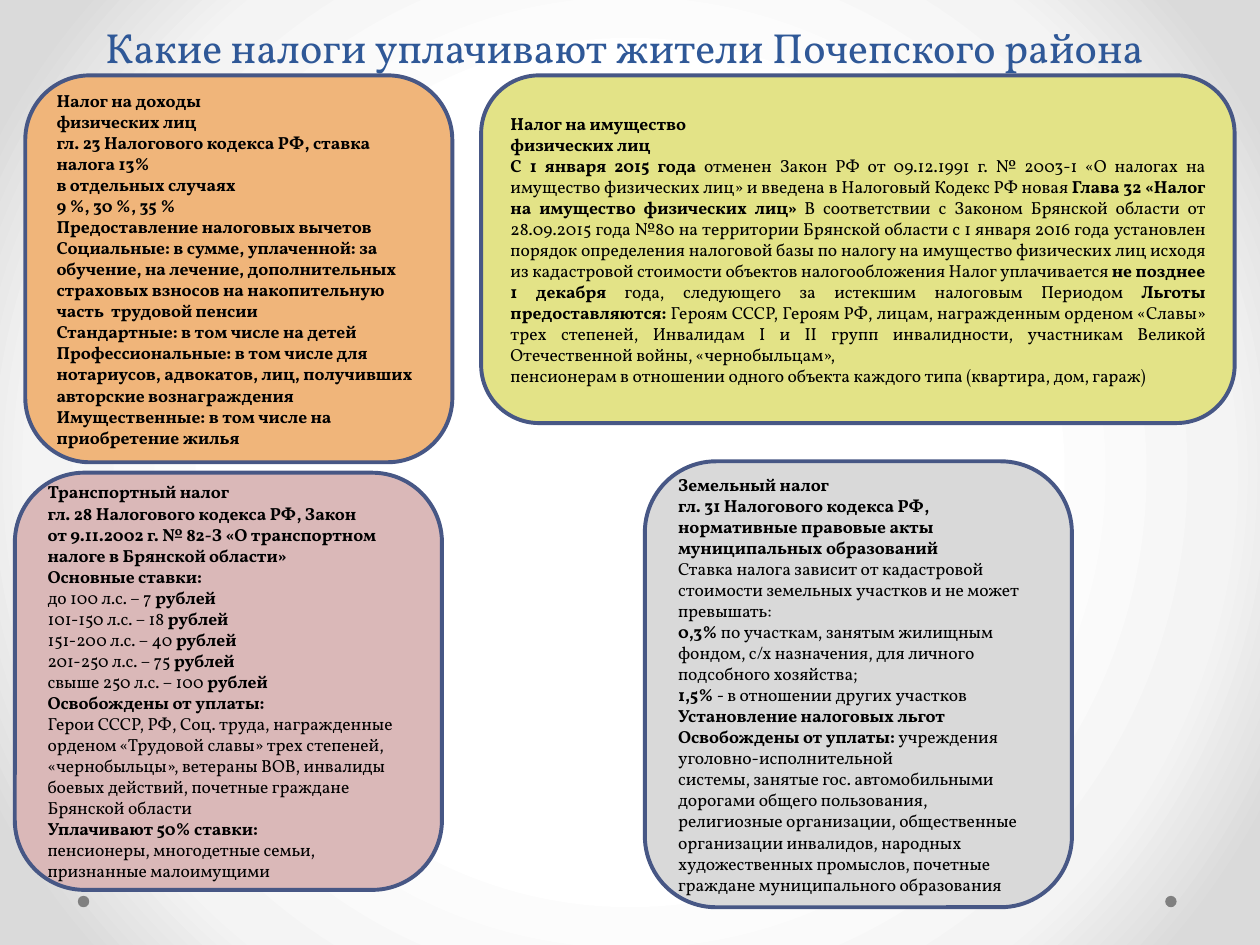
from lxml import etree
from pptx import Presentation
from pptx.dml.color import RGBColor
from pptx.enum.shapes import MSO_SHAPE
from pptx.enum.text import MSO_ANCHOR, MSO_AUTO_SIZE, PP_ALIGN
from pptx.oxml.ns import qn
from pptx.util import Cm, Pt

ROUNDED, OVAL = MSO_SHAPE.ROUNDED_RECTANGLE, MSO_SHAPE.OVAL
MIDDLE, BOTTOM = MSO_ANCHOR.MIDDLE, MSO_ANCHOR.BOTTOM
LEFT, CENTER, JUSTIFY = PP_ALIGN.LEFT, PP_ALIGN.CENTER, PP_ALIGN.JUSTIFY
NO_AUTOFIT = MSO_AUTO_SIZE.NONE

FONT = "Vollkorn"
BLACK = RGBColor(0x00, 0x00, 0x00)
TITLE_BLUE = RGBColor(0x2F, 0x58, 0x97)
OUTLINE_BLUE = RGBColor(0x47, 0x57, 0x85)
ORANGE = RGBColor(0xF0, 0xB5, 0x7A)
LIME = RGBColor(0xE3, 0xE3, 0x87)
PINK = RGBColor(0xDA, 0xB8, 0xB8)
LIGHT_GRAY = RGBColor(0xD9, 0xD9, 0xD9)
DOT_GRAY = RGBColor(0x80, 0x80, 0x80)
BACKDROP_STOPS = [
    (50, RGBColor(0xFF, 0xFF, 0xFF)),
    (76, RGBColor(0xF4, 0xF4, 0xF4)),
    (92, RGBColor(0xDA, 0xDA, 0xDA)),
]

TITLE = "Какие налоги уплачивают жители Почепского района"

# One line per paragraph; asterisks switch bold on and off
INCOME_TAX = [f"*{line}*" for line in (
    "Налог на доходы",
    "физических лиц",
    "гл. 23 Налогового кодекса РФ, ставка",
    "налога 13%",
    "в отдельных случаях",
    "9 %, 30 %, 35 %",
    "Предоставление налоговых вычетов",
    "Социальные: в сумме, уплаченной: за",
    "обучение, на лечение, дополнительных",
    "страховых взносов на накопительную часть  трудовой пенсии",
    "Стандартные: в том числе на детей",
    "Профессиональные: в том числе для",
    "нотариусов, адвокатов, лиц, получивших",
    "авторские вознаграждения",
    "Имущественные: в том числе на",
    "приобретение жилья",
)]
PROPERTY_TAX = [
    "*Налог на имущество*",
    "*физических лиц*",
    "*С 1 января 2015 года *отменен Закон РФ от 09.12.1991 г. № 2003-1 «О налогах на "
    "имущество физических лиц» и введена в Налоговый Кодекс РФ новая "
    "*Глава 32 «Налог на имущество физических лиц» *В соответствии с Законом Брянской "
    "области от 28.09.2015 года №80 на территории Брянской области с 1 января 2016 года "
    "установлен порядок определения налоговой базы по налогу на имущество физических лиц "
    "исходя из кадастровой стоимости объектов налогообложения Налог уплачивается "
    "*не позднее 1 декабря *года, следующего за истекшим налоговым Периодом "
    "*Льготы предоставляются: *Героям СССР, Героям РФ, лицам, награжденным орденом «Славы» "
    "трех степеней, Инвалидам I и II групп инвалидности, участникам Великой Отечественной "
    "войны, «чернобыльцам»,",
    "пенсионерам в отношении одного объекта каждого типа (квартира, дом, гараж)",
]
TRANSPORT_TAX = [
    "*Транспортный налог*",
    "*гл. 28 Налогового кодекса РФ, Закон*",
    "*от 9.11.2002 г. № 82-З «О транспортном*",
    "*налоге в Брянской области»*",
    "*Основные ставки:*",
    "до 100 л.с. – 7 *рублей*",
    "101-150 л.с. – 18 *рублей*",
    "151-200 л.с. – 40 *рублей*",
    "201-250 л.с. – 75 *рублей*",
    "свыше 250 л.с. – 100 *рублей*",
    "*Освобождены от уплаты:*",
    "Герои СССР, РФ, Соц. труда, награжденные",
    "орденом «Трудовой славы» трех степеней,",
    "«чернобыльцы», ветераны ВОВ, инвалиды",
    "боевых действий, почетные граждане Брянской области",
    "*Уплачивают 50% ставки:*",
    "пенсионеры, многодетные семьи, признанные малоимущими",
]
LAND_TAX = [
    "*Земельный налог*",
    "*гл. 31 Налогового кодекса РФ,*",
    "*нормативные правовые акты*",
    "*муниципальных образований*",
    "Ставка налога зависит от кадастровой",
    "стоимости земельных участков и не может",
    "превышать:",
    "*0,3% *по участкам, занятым жилищным",
    "фондом, с/х назначения, для личного",
    "подсобного хозяйства;",
    "*1,5% *- в отношении других участков",
    "*Установление налоговых льгот*",
    "*Освобождены от уплаты: *учреждения уголовно-исполнительной",
    "системы, занятые гос. автомобильными",
    "дорогами общего пользования,",
    "религиозные организации, общественные",
    "организации инвалидов, народных",
    "художественных промыслов, почетные",
    "граждане муниципального образования",
]

# Left, top, width, height in centimetres
TITLE_BOX = (1.09, 0.53, 22.99, 1.04)
FOOTER_BOX = (1.57, 18.06, 22.15, 0.23)
CARDS = [
    ((0.51, 1.52, 8.61, 7.8), ORANGE, LEFT, INCOME_TAX),
    ((9.7, 1.52, 15.19, 7.01), LIME, JUSTIFY, PROPERTY_TAX),
    ((0.3, 9.53, 8.61, 8.41), PINK, LEFT, TRANSPORT_TAX),
    ((13, 9.3, 8.61, 8.99), LIGHT_GRAY, LEFT, LAND_TAX),
]


def add_span(para, text, size, color, bold=False):
    span = para.add_run()
    span.text = text
    font = span.font
    font.name, font.size, font.bold = FONT, Pt(size), bold
    font.color.rgb = color


def paint_backdrop(page):
    """Radial gradient from the centre of the page."""
    page.background.fill.gradient()
    gradient = page.element.find(".//" + qn("a:gradFill"))
    for child in list(gradient):
        gradient.remove(child)
    stops = etree.SubElement(gradient, qn("a:gsLst"))
    for percent, color in BACKDROP_STOPS:
        stop = etree.SubElement(stops, qn("a:gs"), pos=str(percent * 1000))
        etree.SubElement(stop, qn("a:srgbClr"), val=str(color))
    circle = etree.SubElement(gradient, qn("a:path"), path="circle")
    etree.SubElement(circle, qn("a:fillToRect"), l="50000", t="50000", r="50000", b="50000")


def place_title(page, box):
    title = page.shapes.title
    title.left, title.top, title.width, title.height = map(Cm, box)
    frame = title.text_frame
    frame.auto_size = NO_AUTOFIT
    frame.vertical_anchor = BOTTOM
    para = frame.paragraphs[0]
    para.alignment = CENTER
    add_span(para, TITLE, 24, TITLE_BLUE)


def add_footer_dots(page, box):
    """A dot at each end of the footer."""
    left, top, width, size = box
    for x in (left, left + width - size):
        dot = page.shapes.add_shape(OVAL, Cm(x), Cm(top), Cm(size), Cm(size))
        dot.shadow.inherit = False
        dot.fill.solid()
        dot.fill.fore_color.rgb = DOT_GRAY
        dot.line.fill.background()


def add_tax_card(page, box, color, alignment, lines):
    card = page.shapes.add_shape(ROUNDED, *map(Cm, box))
    card.shadow.inherit = False
    card.fill.solid()
    card.fill.fore_color.rgb = color
    card.line.color.rgb = OUTLINE_BLUE
    card.line.width = Pt(2.25)
    frame = card.text_frame
    frame.word_wrap = True
    frame.vertical_anchor = MIDDLE
    for index, line in enumerate(lines):
        para = frame.add_paragraph() if index else frame.paragraphs[0]
        para.alignment = alignment
        for position, text in enumerate(line.split("*")):
            if text:
                add_span(para, text, 10, BLACK, bold=position % 2 == 1)


def main():
    deck = Presentation()
    deck.slide_width, deck.slide_height = Cm(25.4), Cm(19.05)
    page = deck.slides.add_slide(deck.slide_layouts[0])
    subtitle = page.placeholders[1].element
    subtitle.getparent().remove(subtitle)
    paint_backdrop(page)
    place_title(page, TITLE_BOX)
    add_footer_dots(page, FOOTER_BOX)
    for card in CARDS:
        add_tax_card(page, *card)
    deck.save("out.pptx")


if __name__ == "__main__":
    main()
